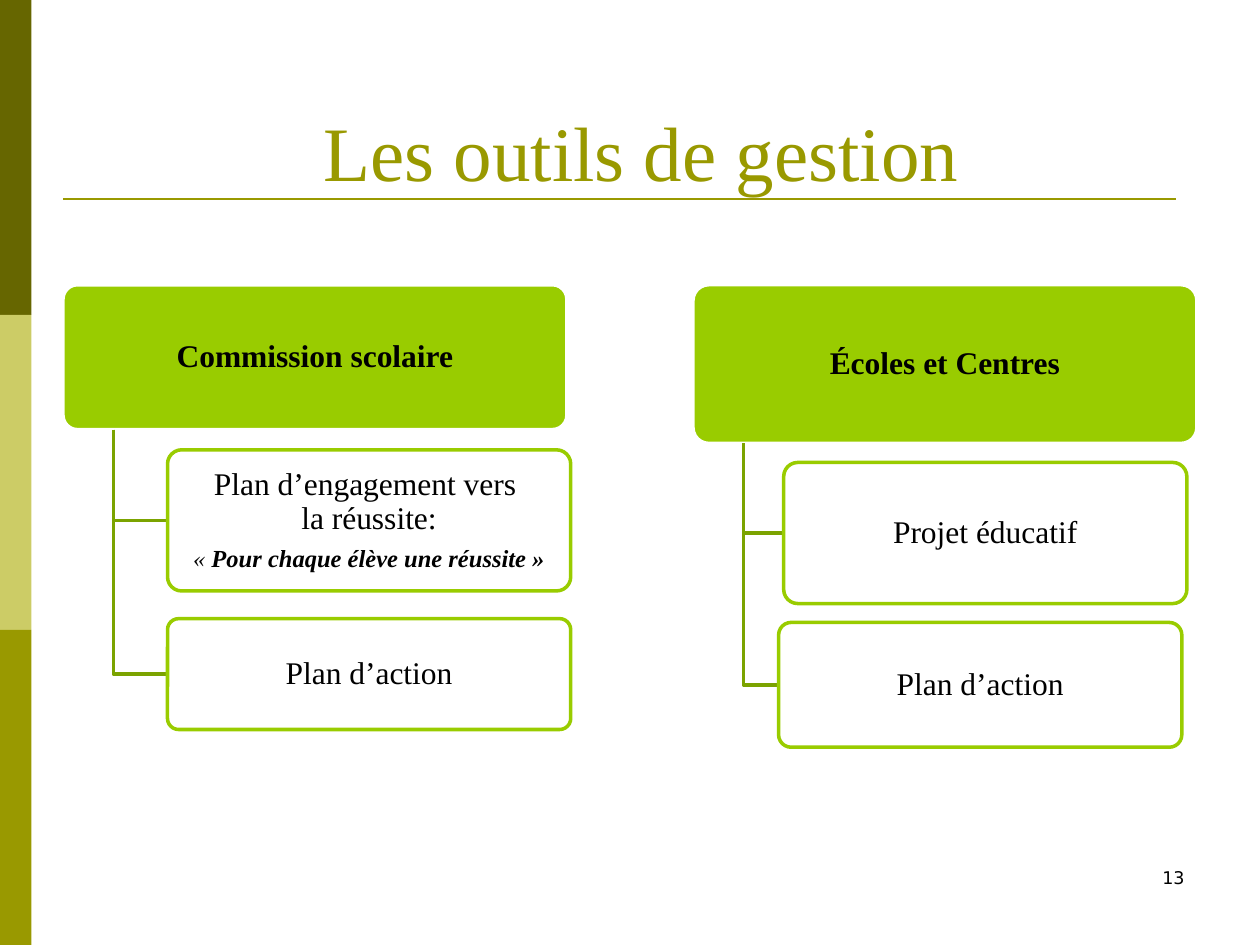
from dataclasses import dataclass

from lxml.etree import SubElement
from pptx import Presentation
from pptx.dml.color import RGBColor
from pptx.enum.shapes import MSO_CONNECTOR, MSO_SHAPE
from pptx.enum.text import MSO_ANCHOR as Anchor, PP_ALIGN as Align
from pptx.oxml.ns import qn
from pptx.util import Inches, Pt


@dataclass(frozen=True)
class Theme:
    olive: RGBColor = RGBColor(0x99, 0x99, 0x00)
    dark_olive: RGBColor = RGBColor(0x66, 0x66, 0x00)
    pale_olive: RGBColor = RGBColor(0xCC, 0xCC, 0x66)
    lime: RGBColor = RGBColor(0x99, 0xCC, 0x00)
    branch: RGBColor = RGBColor(0x7B, 0xA3, 0x00)
    white: RGBColor = RGBColor(0xFF, 0xFF, 0xFF)
    black: RGBColor = RGBColor(0x00, 0x00, 0x00)
    font: str = "Times New Roman"
    number_font: str = "DejaVu Sans"
    title_size: int = 44
    text_size: int = 18
    motto_size: int = 14
    number_size: int = 10


@dataclass(frozen=True)
class Phrase:
    text: str
    size: int = Theme.text_size
    bold: bool = False
    italic: bool = False


@dataclass(frozen=True)
class Box:
    left: float
    top: float
    width: float
    height: float
    paragraphs: tuple[tuple[Phrase, ...], ...]


@dataclass(frozen=True)
class Branch:
    header: Box
    tools: tuple[Box, ...]


THEME = Theme()
HEADER_WIDTH, TOOL_WIDTH, HEADER_TOP = 4, 3.2, 2.26
TRUNK_OFFSET = 0.4

ACTION_PLAN = ((Phrase("Plan d’action"),),)
COMMITMENT_PLAN = (
    (Phrase("Plan d’engagement vers \nla réussite:"),),
    (
        Phrase("« ", THEME.motto_size, italic=True),
        Phrase("Pour chaque élève une réussite »", THEME.motto_size, True, True),
    ),
)
BRANCHES = (
    Branch(
        Box(0.5, HEADER_TOP, HEADER_WIDTH, 1.15,
            ((Phrase("Commission scolaire", bold=True),),)),
        (Box(1.33, 3.57, TOOL_WIDTH, 1.12, COMMITMENT_PLAN),
         Box(1.33, 4.91, TOOL_WIDTH, 0.88, ACTION_PLAN)),
    ),
    Branch(
        Box(5.5, HEADER_TOP, HEADER_WIDTH, 1.26,
            ((Phrase("Écoles et Centres", bold=True),),)),
        (Box(6.22, 3.67, TOOL_WIDTH, 1.12, ((Phrase("Projet éducatif"),),)),
         Box(6.18, 4.94, TOOL_WIDTH, 0.99, ACTION_PLAN)),
    ),
)


def style_font(font, size: int, color: RGBColor, name: str = THEME.font) -> None:
    font.name, font.size, font.color.rgb = name, Pt(size), color


def write_phrase(paragraph, phrase: Phrase) -> None:
    for index, line in enumerate(phrase.text.split("\n")):
        if index:
            paragraph.add_line_break()
        run = paragraph.add_run()
        run.text = line
        style_font(run.font, phrase.size, THEME.black)
        run.font.bold, run.font.italic = phrase.bold, phrase.italic


def draw_box(slide, box: Box, fill: RGBColor, outline: RGBColor):
    shape = slide.shapes.add_shape(
        MSO_SHAPE.ROUNDED_RECTANGLE,
        Inches(box.left), Inches(box.top), Inches(box.width), Inches(box.height))
    shape.adjustments[0] = 0.1
    shape.shadow.inherit = False
    shape.fill.solid()
    shape.fill.fore_color.rgb = fill
    shape.line.color.rgb = outline
    shape.line.width = Pt(2)
    frame = shape.text_frame
    frame.word_wrap = True
    frame.vertical_anchor = Anchor.MIDDLE
    frame.margin_left = frame.margin_right = Inches(0.07)
    frame.margin_top = frame.margin_bottom = Inches(0.06)
    for index, phrases in enumerate(box.paragraphs):
        paragraph = frame.add_paragraph() if index else frame.paragraphs[0]
        paragraph.alignment = Align.CENTER
        paragraph.line_spacing = 0.9
        paragraph.space_after = Pt(6)
        for phrase in phrases:
            write_phrase(paragraph, phrase)
    return shape


def draw_elbow(slide, header: Box, tool: Box) -> None:
    """Run down from the header's lower edge, then right to the tool's side."""
    trunk = Inches(header.left + TRUNK_OFFSET)
    middle = Inches(tool.top + tool.height / 2)
    builder = slide.shapes.build_freeform(trunk, Inches(header.top + header.height))
    builder.add_line_segments([(trunk, middle), (Inches(tool.left), middle)], close=False)
    elbow = builder.convert_to_shape()
    elbow.shadow.inherit = False
    elbow.fill.background()
    elbow.line.color.rgb = THEME.branch
    elbow.line.width = Pt(2)


def draw_branch(slide, branch: Branch) -> None:
    draw_box(slide, branch.header, THEME.lime, THEME.white)
    for tool in branch.tools:
        draw_elbow(slide, branch.header, tool)
        card = draw_box(slide, tool, THEME.white, THEME.lime)
        color = card.fill._xPr.find(qn("a:solidFill"))[0]
        SubElement(color, qn("a:alpha")).set("val", "90000")


def draw_frame(slide) -> None:
    """Draw the side bands and the rule under the title."""
    for index, color in enumerate((THEME.dark_olive, THEME.pale_olive, THEME.olive)):
        band = slide.shapes.add_shape(
            MSO_SHAPE.RECTANGLE, 0, Inches(2.5 * index), Inches(0.25), Inches(2.5))
        band.shadow.inherit = False
        band.fill.solid()
        band.fill.fore_color.rgb = color
        band.line.fill.background()
    rule = slide.shapes.add_connector(
        MSO_CONNECTOR.STRAIGHT, Inches(0.5), Inches(1.58), Inches(9.33), Inches(1.58))
    rule.line.color.rgb = THEME.olive
    rule.line.width = Pt(1.5)
    SubElement(rule._element.spPr, qn("a:effectLst"))


def write_title(slide) -> None:
    title = slide.shapes.title
    title.left, title.top = Inches(0.59), Inches(0.36)
    title.width, title.height = Inches(9), Inches(1.25)
    frame = title.text_frame
    frame.text = "Les outils de gestion"
    frame.vertical_anchor = Anchor.BOTTOM
    frame.paragraphs[0].alignment = Align.CENTER
    style_font(frame.paragraphs[0].runs[0].font, THEME.title_size, THEME.olive)


def write_slide_number(slide) -> None:
    number = slide.shapes.add_textbox(Inches(7.17), Inches(6.83), Inches(2.33), Inches(0.5))
    frame = number.text_frame
    frame.word_wrap = True
    frame.text = "13"
    frame.paragraphs[0].alignment = Align.RIGHT
    style_font(frame.paragraphs[0].runs[0].font, THEME.number_size, THEME.black,
               THEME.number_font)


def main() -> None:
    deck = Presentation()
    deck.slide_width, deck.slide_height = Inches(10), Inches(7.5)
    slide = deck.slides.add_slide(deck.slide_layouts.get_by_name("Title Only"))
    draw_frame(slide)
    write_title(slide)
    for branch in BRANCHES:
        draw_branch(slide, branch)
    write_slide_number(slide)
    deck.save("out.pptx")


if __name__ == "__main__":
    main()
